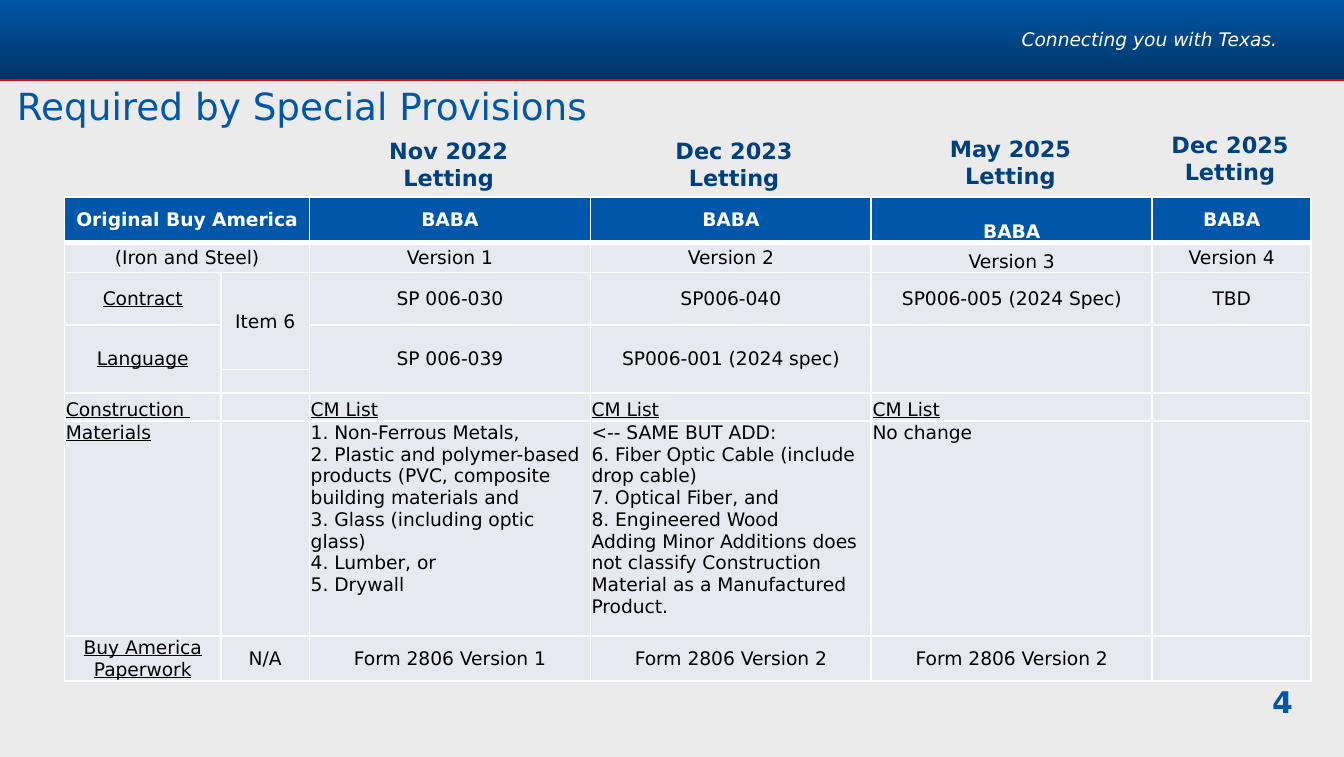
from dataclasses import dataclass
from lxml.etree import SubElement
from pptx import Presentation
from pptx.dml.color import RGBColor
from pptx.enum.shapes import MSO_CONNECTOR, MSO_SHAPE
from pptx.enum.text import MSO_ANCHOR, MSO_AUTO_SIZE, PP_ALIGN
from pptx.oxml.ns import qn
from pptx.util import Pt


@dataclass(frozen=True)
class Theme:
    font: str = "DejaVu Sans"
    back: str = "EBEBEB"
    blue: str = "0056A9"
    navy: str = "00407F"
    top: str = "0057A8"
    low: str = "003567"
    red: str = "D90D0D"
    pale: str = "E7E9F1"
    white: str = "FFFFFF"
    black: str = "000000"
    title: int = 20
    page: int = 16
    date: int = 12
    body: int = 10
    blank: int = 8


T = Theme()

DATES = [  # left, top, text
    (196.8, 69.8, "Nov 2022\nLetting"),
    (349.7, 69.8, "Dec 2023\nLetting"),
    (497.8, 68.8, "May 2025 Letting"),
    (615.4, 66.7, "Dec 2025 Letting"),
]

COLS = [83.7, 47.5, 150.5, 150.5, 150.5, 85.2]
ROWS = [24.6, 16, 28, 24, 12.5, 15, 115.2, 21.9]
MERGED = [(0, 0, 0, 1), (1, 0, 1, 1), (2, 1, 3, 1)] + [(3, c, 4, c) for c in (0, 2, 3, 4, 5)]
HEAD, LIST, ITEMS = 0, 5, 6  # rows with a format of their own

CELLS = [
    ["Original Buy America", "", "BABA", "BABA", "BABA", "BABA"],
    ["(Iron and Steel)", "", "Version 1", "Version 2", "Version 3", "Version 4"],
    ["Contract", "Item 6", "SP 006-030", "SP006-040", "SP006-005 (2024 Spec)", "TBD"],
    ["Language", "", "SP 006-039", "SP006-001 (2024 spec)", "", ""],
    [""] * 6,
    ["Construction ", "", "CM List", "CM List", "CM List", ""],
    ["Materials", "",
     "1. Non-Ferrous Metals,\v"
     "2. Plastic and polymer-based products (PVC, composite building materials and\v"
     "3. Glass (including optic glass)\v4. Lumber, or\v5. Drywall",
     "<-- SAME BUT ADD:\v6. Fiber Optic Cable (include drop cable)\v"
     "7. Optical Fiber, and\v8. Engineered Wood\v"
     "Adding Minor Additions does not classify Construction Material "
     "as a Manufactured Product.",
     "No change", ""],
    ["Buy America Paperwork", "N/A", "Form 2806 Version 1", "Form 2806 Version 2",
     "Form 2806 Version 2", ""],
]


def rgb(code):
    return RGBColor.from_string(code)


def put(frame, text, size=T.body, color=T.black, bold=False, italic=False,
        under=False, align=PP_ALIGN.LEFT, space=None):
    """Fill a frame: a newline starts a paragraph, a vertical tab breaks a line."""
    for i, line in enumerate(text.split("\n")):
        para = frame.add_paragraph() if i else frame.paragraphs[0]
        para.text = line
        para.alignment = align
        if space:
            para.line_spacing = space
        for run in para.runs:
            font = run.font
            font.name, font.size = T.font, Pt(size)
            font.bold, font.italic, font.underline = bold, italic, under
            font.color.rgb = rgb(color)
        if not line:
            # keeps a blank cell from stretching its row
            SubElement(para._p, qn("a:endParaRPr"), sz=str(T.blank * 100))


def fit(frame, anchor, inset=None):
    frame.word_wrap = True
    frame.auto_size = MSO_AUTO_SIZE.NONE
    frame.vertical_anchor = anchor
    if inset is not None:
        frame.margin_left = frame.margin_right = Pt(inset)
        frame.margin_top = frame.margin_bottom = Pt(inset)


def label(slide, box, text, anchor=MSO_ANCHOR.TOP, inset=None, **style):
    frame = slide.shapes.add_textbox(*map(Pt, box)).text_frame
    fit(frame, anchor, inset)
    put(frame, text, **style)


def banner(slide):
    bar = slide.shapes.add_shape(MSO_SHAPE.RECTANGLE, Pt(-0.7), Pt(-2.2), Pt(721.4), Pt(44.6))
    bar.shadow.inherit = False
    bar.line.fill.background()
    bar.fill.gradient()
    bar.fill.gradient_angle = 270
    for stop, color in zip(bar.fill.gradient_stops, (T.top, T.low)):
        stop.color.rgb = rgb(color)
    rule = slide.shapes.add_connector(MSO_CONNECTOR.STRAIGHT, Pt(-0.7), Pt(43), Pt(720.7), Pt(43))
    rule.line.color.rgb = rgb(T.red)
    rule.line.width = Pt(1)
    SubElement(rule._element.spPr, qn("a:effectLst"))


def heading(slide, text):
    title = slide.shapes.title
    title.left, title.top, title.width, title.height = map(Pt, (9, 46.1, 648, 23))
    fit(title.text_frame, MSO_ANCHOR.BOTTOM, 0)
    put(title.text_frame, text, size=T.title, color=T.blue, space=0.9)


def edge(cell, row):
    """Draw white borders, thick between the header and the row below it."""
    props = cell._tc.get_or_add_tcPr()
    for side in "LRTB":
        thick = (row, side) in ((HEAD, "B"), (HEAD + 1, "T"))
        line = SubElement(props, qn("a:ln" + side), w=str(Pt(3 if thick else 1)))
        fill = SubElement(line, qn("a:solidFill"))
        SubElement(fill, qn("a:srgbClr"), val=T.white)


def dress(cell, row, col, text):
    edge(cell, row)
    cell.fill.solid()
    cell.fill.fore_color.rgb = rgb(T.blue if row == HEAD else T.pale)
    cell.margin_left = cell.margin_right = cell.margin_top = Pt(0.7)
    cell.margin_bottom = 0
    if row == ITEMS:
        cell.vertical_anchor = MSO_ANCHOR.TOP
    elif row == LIST or (row <= 1 and col == 4):
        cell.vertical_anchor = MSO_ANCHOR.BOTTOM
    else:
        cell.vertical_anchor = MSO_ANCHOR.MIDDLE
    put(cell.text_frame, text,
        color=T.white if row == HEAD else T.black,
        bold=row == HEAD,
        under=row == LIST or (col == 0 and row > 1),
        align=PP_ALIGN.LEFT if row in (LIST, ITEMS) else PP_ALIGN.CENTER)


def matrix(slide):
    frame = slide.shapes.add_table(len(ROWS), len(COLS), Pt(34.6), Pt(105.4),
                                   Pt(sum(COLS)), Pt(sum(ROWS)))
    table = frame.table
    table.horz_banding = False
    for col, width in zip(table.columns, COLS):
        col.width = Pt(width)
    for row, height in zip(table.rows, ROWS):
        row.height = Pt(height)
    for r, line in enumerate(CELLS):
        for c, text in enumerate(line):
            dress(table.cell(r, c), r, c, text)
    for top, left, low, right in MERGED:
        table.cell(top, left).merge(table.cell(low, right))


def main():
    deck = Presentation()
    deck.slide_width, deck.slide_height = Pt(720), Pt(405.36)
    slide = deck.slides.add_slide(deck.slide_layouts[5])
    slide.background.fill.solid()
    slide.background.fill.fore_color.rgb = rgb(T.back)
    banner(slide)
    label(slide, (620.6, 362.5, 72, 23), "4", MSO_ANCHOR.BOTTOM, 0, size=T.page,
          color=T.blue, bold=True, align=PP_ALIGN.RIGHT, space=0.9)
    label(slide, (516.4, 0, 167.8, 43.2), "Connecting you with Texas.", MSO_ANCHOR.MIDDLE, 0,
          color=T.white, italic=True, align=PP_ALIGN.RIGHT, space=0.9)
    heading(slide, "Required by Special Provisions")
    for left, top, text in DATES:
        label(slide, (left, top, 87.1, 36), text, size=T.date, color=T.navy,
              bold=True, align=PP_ALIGN.CENTER)
    matrix(slide)
    deck.save("out.pptx")


if __name__ == "__main__":
    main()
